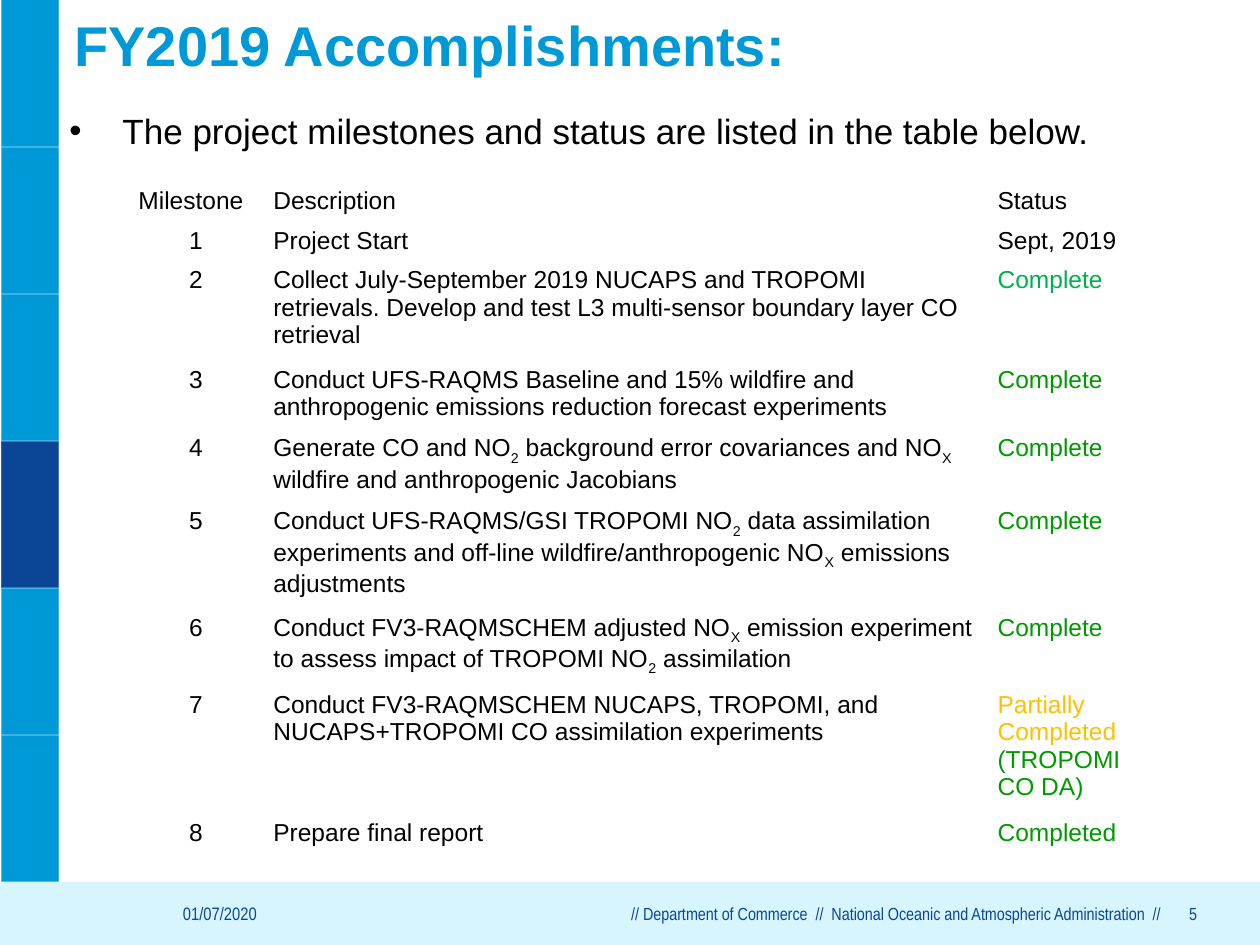
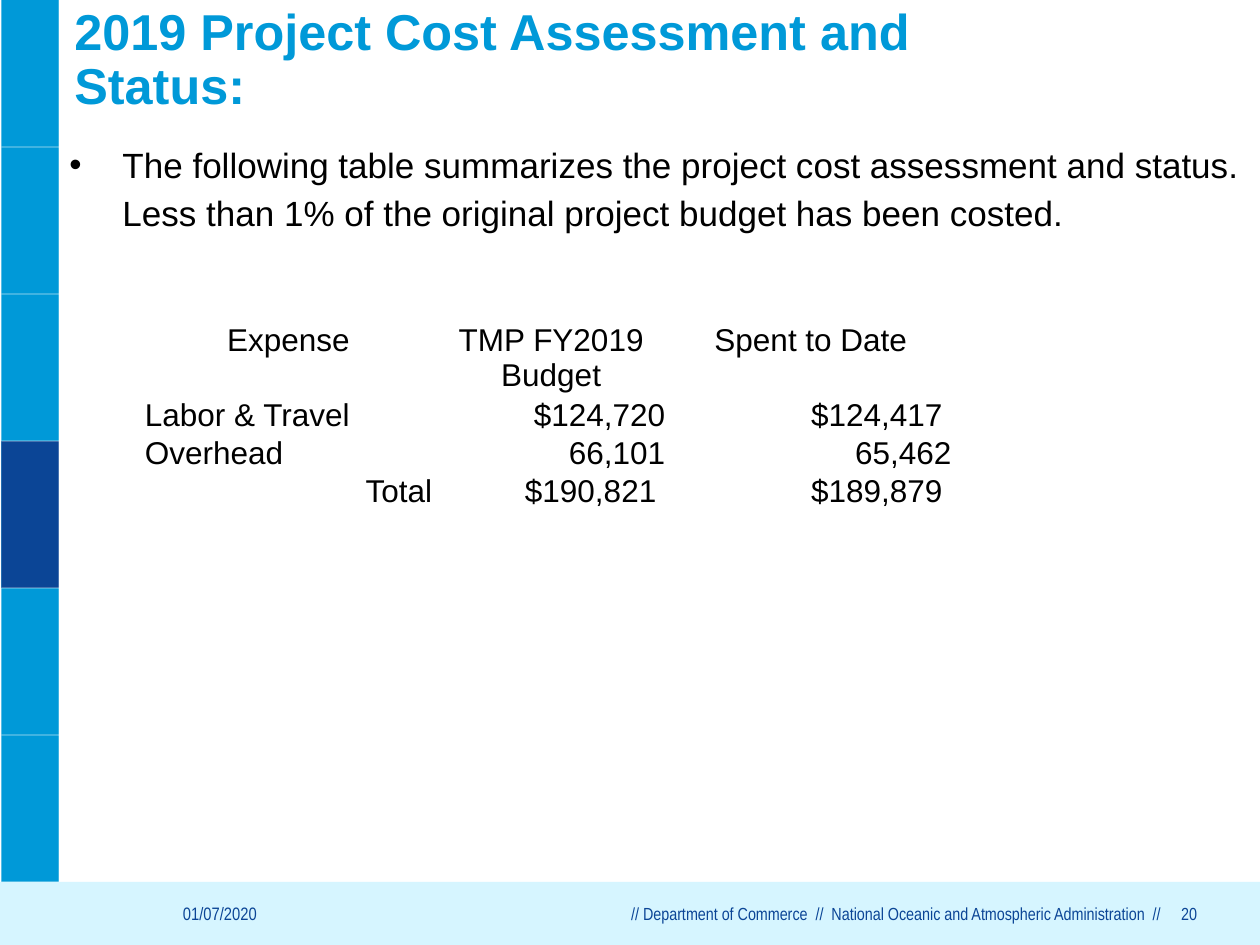
from dataclasses import dataclass

from lxml import etree
from pptx import Presentation
from pptx.dml.color import RGBColor
from pptx.enum.shapes import MSO_CONNECTOR as Connector, MSO_SHAPE as Shape
from pptx.enum.text import MSO_ANCHOR as Anchor, PP_ALIGN as Align
from pptx.oxml.ns import qn
from pptx.util import Cm, Pt


@dataclass(frozen=True)
class Theme:
    blue: str = "0099D8"
    navy: str = "0B4596"
    pale: str = "D6F5FF"
    white: str = "FFFFFF"
    black: str = "000000"
    bright_green: str = "00B050"
    green: str = "009900"
    amber: str = "FFC000"
    font: str = "Arial"
    narrow: str = "Arial Narrow"
    title: float = 32
    long_title: float = 28.8
    body: float = 20
    cost: float = 18
    milestone: float = 14
    footer: float = 10
    date: float = 10.3


THEME = Theme()
WIDTH, HEIGHT = 25.4, 19.05
FOOTER_TOP = 17.78
BAND_COUNT = 6
BAND = FOOTER_TOP / BAND_COUNT
BAR_LEFT, BAR_RIGHT = 0.03, 1.19


def write(frame, text, size, color=THEME.black, font=THEME.font, bold=False,
          align=Align.LEFT, line_spacing=None, bullet=False):
    para = frame.paragraphs[0]
    para.alignment = align
    if line_spacing:
        para.line_spacing = line_spacing
    if bullet:
        properties = para._p.get_or_add_pPr()
        properties.set("marL", str(Cm(1.27)))
        properties.set("indent", str(Cm(-1.07)))
        etree.SubElement(properties, qn("a:buFont"), typeface=THEME.font)
        etree.SubElement(properties, qn("a:buChar"), char="•")
    pieces = [(text, color)] if isinstance(text, str) else text
    for words, ink in pieces:
        for index, part in enumerate(words.split("~")):
            span = para.add_run()
            span.text = part
            span.font.name = font
            span.font.size = Pt(size)
            span.font.bold = bold
            span.font.color.rgb = RGBColor.from_string(ink)
            if index % 2:
                span.font._element.set("baseline", "-25000")


class Builder:
    def __init__(self, theme):
        self.theme = theme
        self.deck = Presentation()
        self.deck.slide_width, self.deck.slide_height = Cm(WIDTH), Cm(HEIGHT)
        self.page = None

    def rectangle(self, left, top, width, height, color):
        box = self.page.shapes.add_shape(
            Shape.RECTANGLE, Cm(left), Cm(top), Cm(width), Cm(height))
        box.shadow.inherit = False
        box.fill.solid()
        box.fill.fore_color.rgb = RGBColor.from_string(color)
        box.line.fill.background()

    def line(self, left, top, right, bottom):
        rule = self.page.shapes.add_connector(
            Connector.STRAIGHT, Cm(left), Cm(top), Cm(right), Cm(bottom))
        rule.line.width = Pt(0.75)
        rule.line.color.rgb = RGBColor.from_string(self.theme.white)
        properties = rule._element.spPr
        color = properties.find(".//" + qn("a:srgbClr"))
        etree.SubElement(color, qn("a:alpha"), val="40000")
        etree.SubElement(properties, qn("a:effectLst"))

    def text(self, left, top, width, height, text, anchor=Anchor.TOP, **style):
        box = self.page.shapes.add_textbox(
            Cm(left), Cm(top), Cm(width), Cm(height))
        frame = box.text_frame
        frame.word_wrap = True
        frame.vertical_anchor = anchor
        frame.margin_left = frame.margin_right = 0
        frame.margin_top = frame.margin_bottom = 0
        write(frame, text, **style)

    def table(self, left, top, columns, heights, rows, size, margins):
        grid = self.page.shapes.add_table(
            len(rows), len(columns), Cm(left), Cm(top),
            Cm(sum(columns)), Cm(sum(heights))).table
        grid.first_row = grid.horz_banding = False
        for column, width in zip(grid.columns, columns):
            column.width = Cm(width)
        side, edge = margins
        for row, height, values in zip(grid.rows, heights, rows):
            row.height = Cm(height)
            for cell, (text, align, right) in zip(row.cells, values):
                cell.fill.background()
                cell.margin_left = Cm(side)
                cell.margin_right = Cm(right or side)
                cell.margin_top = cell.margin_bottom = Cm(edge)
                write(cell.text_frame, text, size=size, align=align)

    def start_page(self, number):
        theme = self.theme
        self.page = self.deck.slides.add_slide(self.deck.slide_layouts[6])
        bar_width = BAR_RIGHT - BAR_LEFT
        self.rectangle(BAR_LEFT, 0, bar_width, HEIGHT, theme.blue)
        self.rectangle(BAR_LEFT, 3 * BAND, bar_width, BAND, theme.navy)
        for index in range(1, BAND_COUNT + 1):
            self.line(BAR_LEFT, index * BAND, BAR_RIGHT, index * BAND)
        self.line(BAR_RIGHT, 0, BAR_RIGHT, HEIGHT)
        self.rectangle(0, FOOTER_TOP, WIDTH, HEIGHT - FOOTER_TOP, theme.pale)
        agency = ("// Department of Commerce  //  National Oceanic and "
                  "Atmospheric Administration  //")
        for left, top, width, words, size in (
                (12.47, 18.21, 10.92, agency, theme.footer),
                (23.55, 18.21, 0.58, str(number), theme.footer),
                (3.12, 18.19, 2.06, "01/07/2020", theme.date)):
            self.text(left, top, width, 0.43, words, size=size,
                      color=theme.navy, font=theme.narrow, align=Align.RIGHT)

    def title(self, top, text, size):
        self.text(1.5, top, 19.96, 2.06, text, anchor=Anchor.MIDDLE, size=size,
                  color=self.theme.blue, bold=True, line_spacing=0.9)

    def body(self, top, text):
        self.text(1.2, top, 23.85, 15.88, text, size=self.theme.body,
                  line_spacing=1.14, bullet=True)


def build_accomplishments(builder):
    builder.start_page(5)
    builder.body(2.08, "The project milestones and status are listed in the "
                       "table below.")
    builder.title(-0.05, "FY2019 Accomplishments:", THEME.title)
    complete = [("Complete", THEME.green)]
    milestones = [
        ("Project Start", "Sept, 2019"),
        ("Collect July-September 2019 NUCAPS and TROPOMI retrievals. Develop "
         "and test L3 multi-sensor boundary layer CO retrieval",
         [("Complete", THEME.bright_green)]),
        ("Conduct UFS-RAQMS Baseline and 15% wildfire and anthropogenic "
         "emissions reduction forecast experiments", complete),
        ("Generate CO and NO~2~ background error covariances and NO~X~ "
         "wildfire and anthropogenic Jacobians", complete),
        ("Conduct UFS-RAQMS/GSI TROPOMI NO~2~ data assimilation experiments "
         "and off-line wildfire/anthropogenic NO~X~ emissions adjustments",
         complete),
        ("Conduct FV3-RAQMSCHEM adjusted NO~X~ emission experiment to assess "
         "impact of TROPOMI NO~2~ assimilation", complete),
        ("Conduct FV3-RAQMSCHEM NUCAPS, TROPOMI, and NUCAPS+TROPOMI CO "
         "assimilation experiments",
         [("Partially Completed ", THEME.amber),
          ("(TROPOMI CO DA)", THEME.green)]),
        ("Prepare final report", [("Completed", THEME.green)]),
    ]
    rows = [[(name, Align.LEFT, None)
             for name in ("Milestone", "Description", "Status")]]
    for number, (description, status) in enumerate(milestones, 1):
        rows.append([(str(number), Align.CENTER, None),
                     (description, Align.LEFT, None),
                     (status, Align.LEFT, None)])
    builder.table(2.59, 3.68, (2.72, 14.6, 3.53),
                  (0.8, 0.79, 2, 1.39, 1.47, 2.14, 1.55, 2.58, 0.8),
                  rows, THEME.milestone, (0.2, 0.1))


def build_cost_status(builder):
    builder.start_page(20)
    builder.body(2.77, "The following table summarizes the project cost "
                       "assessment and status. Less than 1% of the original "
                       "project budget has been costed.")
    builder.title(0.2, "2019 Project Cost Assessment and Status:",
                  THEME.long_title)
    inset = 0.23
    rows = [
        [(name, Align.CENTER, None)
         for name in ("Expense", "TMP FY2019 Budget", "Spent to Date")],
        [("Labor & Travel", Align.LEFT, None),
         ("$124,720", Align.RIGHT, None), ("$124,417", Align.RIGHT, inset)],
        [("Overhead", Align.LEFT, None),
         ("66,101", Align.RIGHT, None), ("65,462", Align.RIGHT, None)],
        [("Total", Align.RIGHT, None),
         ("$190,821", Align.RIGHT, inset), ("$189,879", Align.RIGHT, inset)],
    ]
    builder.table(2.87, 6.5, (5.89, 4.7, 5.77), (1.51, 0.76, 0.76, 0.76),
                  rows, THEME.cost, (0.05, 0))


def main():
    builder = Builder(THEME)
    build_accomplishments(builder)
    build_cost_status(builder)
    builder.deck.save("out.pptx")


if __name__ == "__main__":
    main()
